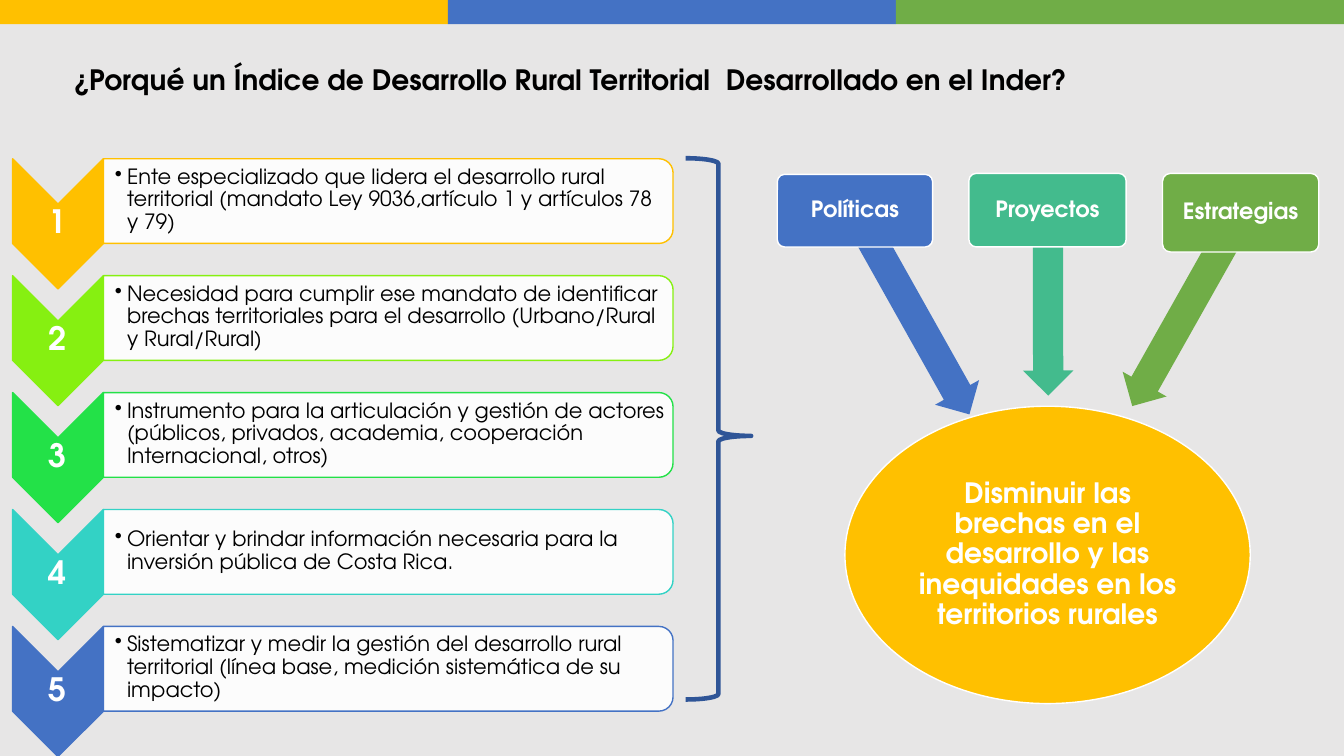
from lxml import etree
from pptx import Presentation
from pptx.dml.color import RGBColor
from pptx.enum import shapes, text
from pptx.oxml import ns
from pptx.util import Inches, Pt

COLORS = {
    "background": "E7E6E6", "white": "FFFFFF", "black": "000000",
    "gold": "FFC000", "blue": "4472C4", "green": "70AD47", "teal": "43BB8D",
    "lime": "86F011", "emerald": "23E148", "turquoise": "33D2C5", "navy": "2F5597",
}
FONT = "TeX Gyre Adventor"
KINDS = shapes.MSO_SHAPE


def add_figure(kind, box, fill=None, line=None, width=1, rotation=0, adjustments=()):
    shape = slide.shapes.add_shape(kind, *[Inches(length) for length in box])
    shape.shadow.inherit = False
    shape.rotation = rotation
    for index, value in enumerate(adjustments):
        shape.adjustments[index] = value
    if fill:
        shape.fill.solid()
        shape.fill.fore_color.rgb = RGBColor.from_string(COLORS[fill])
    else:
        shape.fill.background()
    if line:
        shape.line.color.rgb = RGBColor.from_string(COLORS[line])
        shape.line.width = Pt(width)
    else:
        shape.line.fill.background()
    return shape


def write(shape, words, size, color="white", bold=True, align=text.PP_ALIGN.CENTER,
          inset=0.02, left_inset=None, spacing=0.9):
    frame = shape.text_frame
    frame.word_wrap = True
    frame.vertical_anchor = text.MSO_ANCHOR.MIDDLE
    frame.margin_right = frame.margin_top = frame.margin_bottom = Inches(inset)
    frame.margin_left = Inches(inset if left_inset is None else left_inset)
    paragraph = frame.paragraphs[0]
    paragraph.text = words
    paragraph.alignment = align
    paragraph.line_spacing = spacing
    paragraph.font.name = FONT
    paragraph.font.size = Pt(size)
    paragraph.font.bold = bold
    paragraph.font.color.rgb = RGBColor.from_string(COLORS[color])
    return paragraph


presentation = Presentation()
presentation.slide_width = Inches(13.33)
presentation.slide_height = Inches(7.5)
slide = presentation.slides.add_slide(presentation.slide_layouts[6])
slide.background.fill.solid()
slide.background.fill.fore_color.rgb = RGBColor.from_string(COLORS["background"])

# Top band
band_width = 13.33 / 3
for column, color in enumerate(["gold", "blue", "green"]):
    add_figure(KINDS.RECTANGLE, (column * band_width, -0.02, band_width, 0.26), color)

# Title
title = slide.shapes.add_textbox(Inches(0.63), Inches(0.57), Inches(10.17), Inches(0.44))
write(title, "¿Porqué un Índice de Desarrollo Rural Territorial  Desarrollado en el Inder?",
      20, "black", align=text.PP_ALIGN.LEFT, inset=0.05, left_inset=0.1, spacing=1.0)

# Goal
goal = add_figure(KINDS.OVAL, (8.38, 4.03, 4.02, 2.95), "gold", "white")
write(goal, "Disminuir las brechas en el desarrollo y las inequidades en los territorios rurales",
      20, inset=0.01)

# Means, each with an arrow to the goal
means = [
    ("Políticas", "blue", (7.71, 1.73, 1.54, 0.72), (7.82, 2.81, 2.41, 0.5), 240.7),
    ("Proyectos", "teal", (9.61, 1.72, 1.56, 0.73), (9.48, 2.76, 1.83, 0.5), 269.9),
    ("Estrategias", "green", (11.53, 1.72, 1.55, 0.78), (10.67, 2.82, 2.2, 0.5), 299.4),
]
for name, color, card_box, arrow_box, rotation in means:
    add_figure(KINDS.LEFT_ARROW, arrow_box, color, rotation=rotation, adjustments=(0.6, 0.5))
    card = add_figure(KINDS.ROUNDED_RECTANGLE, card_box, color, "white", adjustments=(0.1,))
    write(card, name, 16, inset=0.03)

# Brace
add_figure(KINDS.RIGHT_BRACE, (6.8, 1.57, 0.65, 5.37), line="navy", width=3.25,
           adjustments=(0.083, 0.513))

# Numbered reasons
reasons = [
    ("gold", "Ente especializado que lidera el desarrollo rural territorial "
             "(mandato Ley 9036,artículo 1 y artículos 78 y 79)"),
    ("lime", "Necesidad para cumplir ese mandato de identificar brechas territoriales "
             "para el desarrollo (Urbano/Rural y Rural/Rural)"),
    ("emerald", "Instrumento para la articulación y gestión de actores "
                "(públicos, privados, academia, cooperación Internacional, otros)"),
    ("turquoise", "Orientar y brindar información necesaria para la inversión pública "
                  "de Costa Rica."),
    ("blue", "Sistematizar y medir la gestión del desarrollo rural territorial "
             "(línea base, medición sistemática de su impacto)"),
]
for row, (color, reason) in enumerate(reasons):
    top = 1.57 + row * 1.16
    add_figure(KINDS.CHEVRON, (-0.07, top + 0.2, 1.29, 0.9), color, color, rotation=90)
    number = slide.shapes.add_textbox(Inches(0.12), Inches(top + 0.45), Inches(0.9), Inches(0.39))
    write(number, str(row + 1), 23)

    panel = add_figure(KINDS.ROUND_2_SAME_RECTANGLE, (3.43, top - 2.4, 0.84, 5.65),
                       "white", color, rotation=90)
    panel_color = panel.fill._xPr.find(ns.qn("a:solidFill"))[0]
    etree.SubElement(panel_color, ns.qn("a:alpha"), val="90000")

    label = slide.shapes.add_textbox(Inches(1.02), Inches(top + 0.04), Inches(5.6), Inches(0.75))
    paragraph = write(label, reason, 15, "black", False, text.PP_ALIGN.LEFT, 0.01, 0.12)
    properties = paragraph._p.get_or_add_pPr()
    properties.set("marL", str(Inches(0.12)))
    properties.set("indent", str(-Inches(0.12)))
    bullet = etree.Element(ns.qn("a:buChar"), char="•")
    properties.find(ns.qn("a:defRPr")).addprevious(bullet)

presentation.save("out.pptx")
